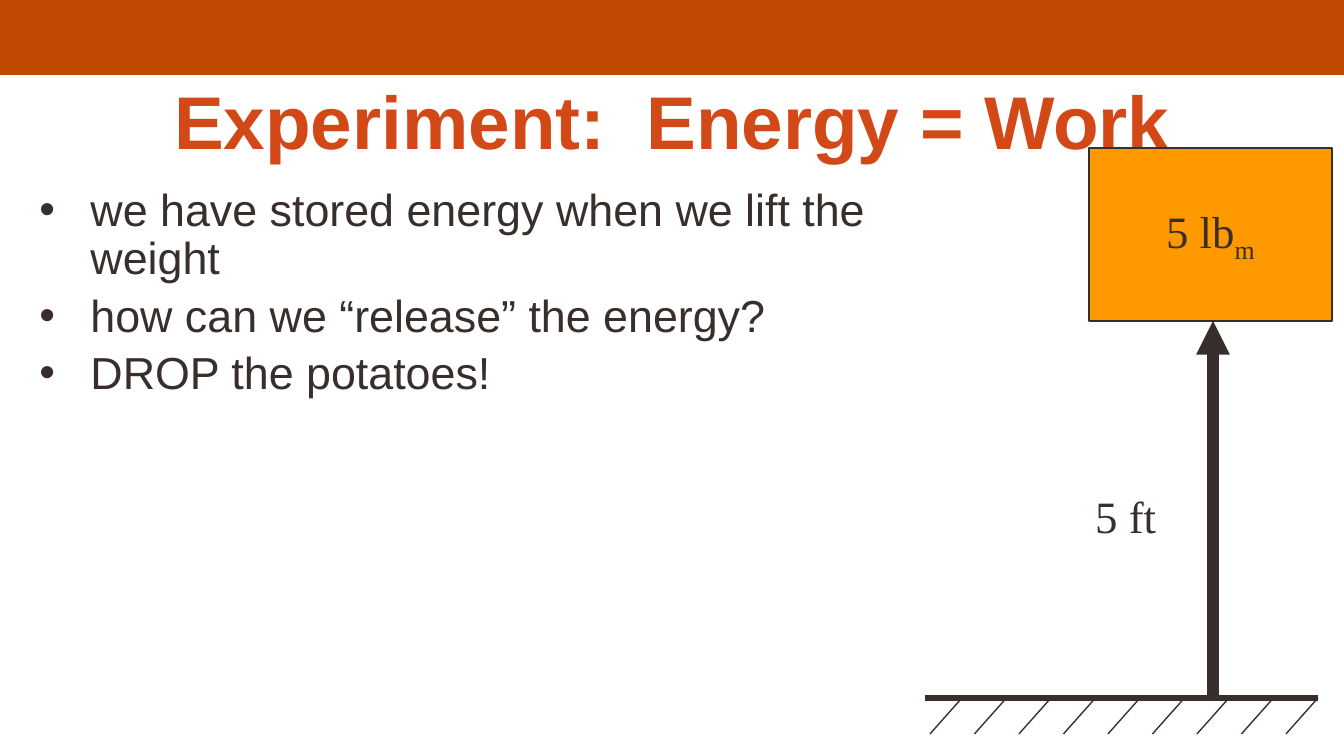
from pptx import Presentation
from pptx import util as u
from pptx.dml.color import RGBColor
from pptx.enum import shapes, text
from pptx.oxml.ns import qn
from lxml import etree

# Content
TITLE = "Experiment:  Energy = Work"
POINTS = [
    "we have stored energy when we lift the weight",
    "how can we “release” the energy?",
    "DROP the potatoes!",
]
MASS, MASS_SUBSCRIPT = "5 lb", "m"
HEIGHT = "5 ft"

RUST = RGBColor(0xBF, 0x49, 0x00)
RED = RGBColor(0xD3, 0x48, 0x17)
ORANGE = RGBColor(0xFF, 0x99, 0x00)
DARK = RGBColor(0x38, 0x2F, 0x2D)
SANS, SERIF = "Arial", "Times New Roman"

# Geometry in px
GROUND_LEFT, GROUND_RIGHT, GROUND_Y = 925, 1318, 698
HATCH_COUNT, HATCH_WIDTH, HATCH_HEIGHT, HATCH_STEP = 9, 32, 36, 44.5
WEIGHT = (1089, 148, 243, 173)
LIFT_X = 1213


def px(n):
    return u.Emu(round(n * 914400 / 134.4))


def place(shape, left, top, width, height):
    shape.left, shape.top = px(left), px(top)
    shape.width, shape.height = px(width), px(height)


def style(paragraph, font_name, size, color, bold=False):
    font = paragraph.font
    font.name, font.size, font.bold = font_name, u.Pt(size), bold
    font.color.rgb = color


def add_box(slide, bounds, fill):
    box = slide.shapes.add_shape(
        shapes.MSO_SHAPE.RECTANGLE, *(px(n) for n in bounds))
    box.shadow.inherit = False
    box.fill.solid()
    box.fill.fore_color.rgb = fill
    return box


def add_line(slide, start, end, width):
    line = slide.shapes.add_connector(
        shapes.MSO_CONNECTOR.STRAIGHT, *(px(n) for n in start + end))
    line.line.color.rgb = DARK
    line.line.width = u.Pt(width)
    etree.SubElement(line._element.spPr, qn("a:effectLst"))
    return line


def add_bullet(paragraph, indent):
    properties = paragraph._p.get_or_add_pPr()
    properties.set("marL", str(px(indent)))
    properties.set("indent", str(-px(indent)))
    etree.SubElement(properties, qn("a:buFont"), typeface=SANS)
    etree.SubElement(properties, qn("a:buChar"), char="•")


def main():
    prs = Presentation()
    prs.slide_width, prs.slide_height = px(1344), px(756)
    slide = prs.slides.add_slide(prs.slide_layouts[1])
    title, points = slide.placeholders

    # Top band, behind everything
    band = add_box(slide, (0, 0, 1344, 75), RUST)
    band.line.fill.background()
    slide.shapes._spTree.insert(2, band._element)

    # Title
    place(title, 101, 60, 1142, 81)
    frame = title.text_frame
    frame.text = TITLE
    frame.auto_size = text.MSO_AUTO_SIZE.NONE
    frame.vertical_anchor = text.MSO_ANCHOR.TOP
    frame.margin_top = px(15)
    frame.paragraphs[0].alignment = text.PP_ALIGN.CENTER
    style(frame.paragraphs[0], SANS, 40, RED, bold=True)

    # Bulleted points
    place(points, 26, 181, 950, 267)
    frame = points.text_frame
    frame.text = "\n".join(POINTS)
    frame.auto_size = text.MSO_AUTO_SIZE.NONE
    for i, point in enumerate(frame.paragraphs):
        add_bullet(point, 51)
        point.line_spacing = 0.9
        point.space_before = u.Pt(4.8 if i else 0)
        style(point, SANS, 24, DARK)

    # Hatched ground
    add_line(slide, (GROUND_LEFT, GROUND_Y), (GROUND_RIGHT, GROUND_Y), 3)
    for i in range(HATCH_COUNT):
        top_x = GROUND_RIGHT - (HATCH_COUNT - 1 - i) * HATCH_STEP
        add_line(slide, (top_x - HATCH_WIDTH, GROUND_Y + HATCH_HEIGHT),
                 (top_x, GROUND_Y), 0.75)

    # Lift arrow and its height
    lift = add_line(slide, (LIFT_X, GROUND_Y),
                    (LIFT_X, WEIGHT[1] + WEIGHT[3]), 6)
    etree.SubElement(lift.line._get_or_add_ln(), qn("a:tailEnd"),
                     type="triangle")
    height = slide.shapes.add_textbox(px(1082), px(482), px(118), px(67))
    height.text_frame.word_wrap = True
    height.text_frame.text = HEIGHT
    style(height.text_frame.paragraphs[0], SERIF, 24, DARK)

    # Weight
    weight = add_box(slide, WEIGHT, ORANGE)
    weight.line.color.rgb = DARK
    weight.line.width = u.Pt(0.75)
    frame = weight.text_frame
    frame.word_wrap = False
    frame.vertical_anchor = text.MSO_ANCHOR.MIDDLE
    mass = frame.paragraphs[0]
    mass.alignment = text.PP_ALIGN.CENTER
    mass.add_run().text = MASS
    subscript = mass.add_run()
    subscript.text = MASS_SUBSCRIPT
    subscript.font._element.set("baseline", "-25000")
    style(mass, SERIF, 24, DARK)

    prs.save("out.pptx")


if __name__ == "__main__":
    main()
